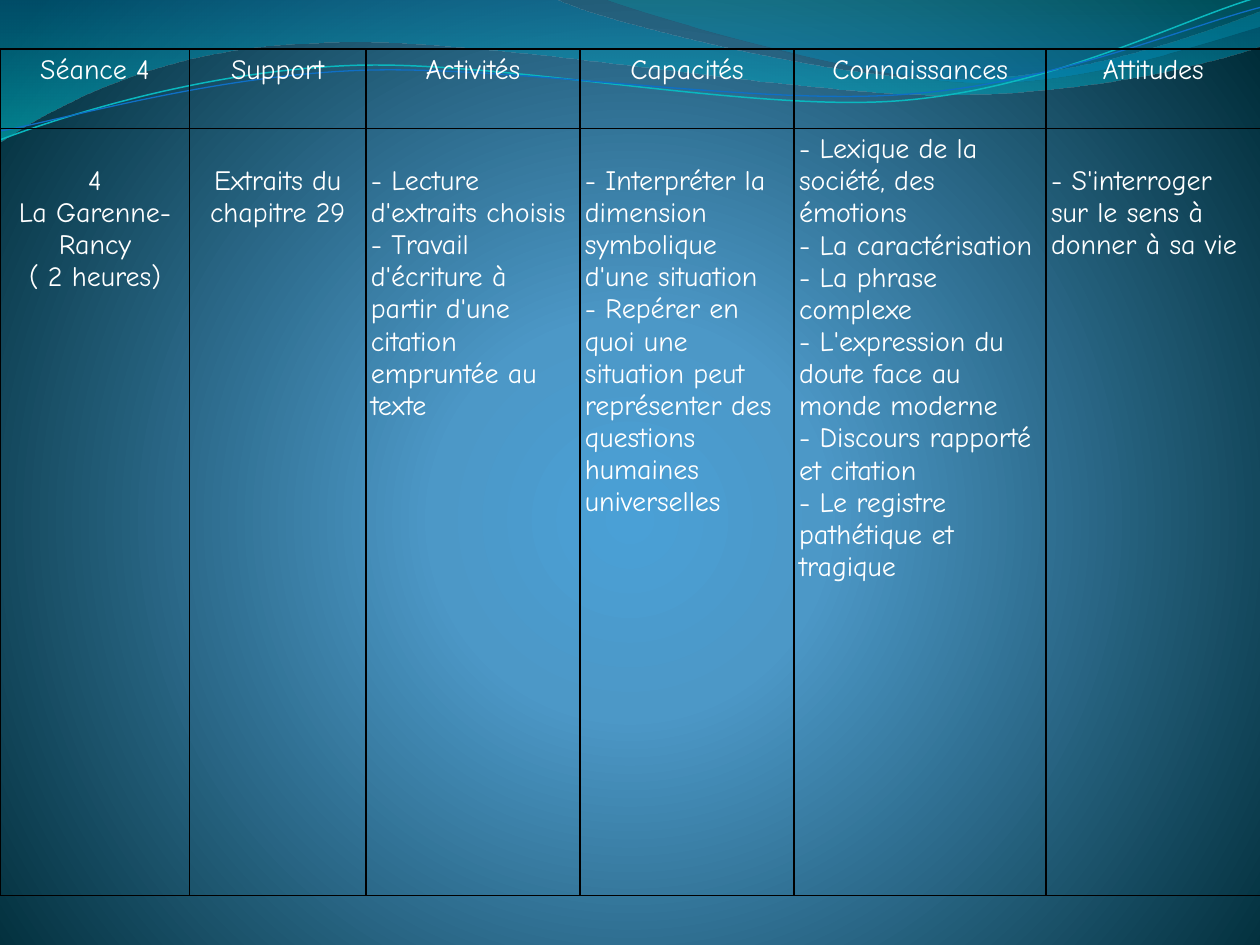
"""Build a lesson plan slide: a six-column table over a blue background with waves."""
from math import cos, radians, sin

from lxml import etree
from pptx import Presentation
from pptx.dml.color import RGBColor
from pptx.enum.text import PP_ALIGN
from pptx.oxml import parse_xml
from pptx.oxml.ns import nsdecls, qn
from pptx.util import Cm, Pt

CENTER, LEFT = PP_ALIGN.CENTER, PP_ALIGN.LEFT
WHITE = RGBColor(0xFF, 0xFF, 0xFF)
BLACK = RGBColor(0x00, 0x00, 0x00)
SKY = RGBColor(0x4A, 0xA0, 0xD6)
STEEL = RGBColor(0x4C, 0x98, 0xC7)
NIGHT = RGBColor(0x00, 0x2C, 0x38)
OCEAN = RGBColor(0x00, 0x74, 0xA1)
TURQUOISE = RGBColor(0x00, 0xC6, 0xCF)
TEAL = RGBColor(0x00, 0xA1, 0xA9)
AZURE = RGBColor(0x00, 0x8B, 0xBF)
CYAN = RGBColor(0x0A, 0xB8, 0xBF)
BLUE = RGBColor(0x0F, 0x6F, 0xC6)
INCH = 2.54
TILT = 2.7
DOWNWARD = '<a:lin ang="5400000" scaled="0"/>'
RADIAL = ('<a:path path="circle"><a:fillToRect l="10000" t="110000" '
          'r="10000" b="100000"/></a:path>')


def set_gradient(owner, fill, stops, direction):
    fill.gradient()
    placed = next(owner._element.iter(qn("a:gradFill")))
    stop_xml = "".join(
        f'<a:gs pos="{position * 1000}"><a:srgbClr val="{color}">'
        f'<a:alpha val="{opacity * 1000}"/></a:srgbClr></a:gs>'
        for position, color, opacity in stops)
    gradient = parse_xml(f'<a:gradFill {nsdecls("a")} rotWithShape="1">'
                         f'<a:gsLst>{stop_xml}</a:gsLst>{direction}</a:gradFill>')
    placed.getparent().replace(placed, gradient)


def add_outline(slide, segments, close):
    points = [pair for segment in segments for pair in zip(segment[::2], segment[1::2])]
    corners = [(Cm(x * INCH), Cm(y * INCH)) for x, y in points]
    builder = slide.shapes.build_freeform(*corners[0])
    builder.add_line_segments(corners[1:], close=close)
    shape = builder.convert_to_shape()
    shape.shadow.inherit = False
    straight = iter(list(shape._element.iter(qn("a:lnTo"))))
    for segment in segments[1:]:
        steps = [next(straight) for _ in segment[::2]]
        if len(steps) == 3:
            curve = etree.Element(qn("a:cubicBezTo"))
            steps[0].addprevious(curve)
            for step in steps:
                curve.append(step[0])
                step.getparent().remove(step)
    return shape


presentation = Presentation()
presentation.slide_width, presentation.slide_height = Cm(25.4), Cm(19.05)
slide = presentation.slides.add_slide(presentation.slide_layouts[6])
set_gradient(slide, slide.background.fill,
             [(0, SKY, 100), (25, STEEL, 100), (100, NIGHT, 100)], RADIAL)

bands = [
    ([(0, 0), (4.4, -0.01), (4.76, 0.17, 6.64, 0.63, 7.58, 0.63),
      (8.53, 0.63, 9.58, 0.26, 10, 0.09), (10.01, 0.36),
      (9.83, 0.44, 8.7, 0.76, 7.46, 0.75), (6.22, 0.75, 3.82, 0.28, 2.57, 0.34),
      (1.29, 0.36, 0.46, 0.83, -0.01, 1.13), (0, 0)],
     [(0, OCEAN, 45), (100, TURQUOISE, 55)]),
    ([(4.79, -0.01), (5.09, 0.11, 6.82, 0.62, 7.69, 0.65),
      (8.56, 0.69, 9.61, 0.32, 10, 0.21), (10, 0), (4.79, -0.01)],
     [(0, TEAL, 30), (80, AZURE, 45)]),
]
for segments, stops in bands:
    shape = add_outline(slide, segments, True)
    set_gradient(shape, shape.fill, stops, DOWNWARD)
    shape.line.fill.background()

waves = [
    ([(0, 1.11), (0.48, 0.93, 1.58, 0.57, 2.77, 0.52),
      (3.95, 0.47, 5.93, 0.89, 7.13, 0.8), (8.33, 0.71, 9.38, 0.15, 9.98, -0.02)],
     (4.99, 0.57), CYAN, 0.85),
    ([(0, 1.04), (0.47, 0.96, 1.64, 0.61, 2.83, 0.56),
      (4.03, 0.51, 5.97, 0.84, 7.17, 0.75), (8.36, 0.67, 9.41, 0.21, 10, 0.06)],
     (5, 0.59), BLUE, 0.75),
]
cosine, sine = cos(radians(TILT)), sin(radians(TILT))
for segments, (middle_x, middle_y), color, width in waves:
    level_segments = []
    for segment in segments:
        level = []
        for x, y in zip(segment[::2], segment[1::2]):
            across, down = x - middle_x, y - middle_y
            level += [middle_x + across * cosine - down * sine,
                      middle_y + across * sine + down * cosine]
        level_segments.append(level)
    shape = add_outline(slide, level_segments, False)
    shape.rotation = 360 - TILT
    shape.fill.background()
    shape.line.color.rgb = color
    shape.line.width = Pt(width)

columns = [
    (1.5, "Séance 4", CENTER, 0.74, ["4", "La Garenne-Rancy", "( 2 heures)"]),
    (1.4, "Support", CENTER, 0.74, ["Extraits du chapitre 29"]),
    (1.7, "Activités", LEFT, 0.74, [
        "- Lecture d'extraits choisis",
        "- Travail d'écriture à partir d'une citation empruntée au texte"]),
    (1.7, "Capacités", LEFT, 0.74, [
        "- Interpréter la dimension symbolique d'une situation",
        "- Repérer en quoi une situation peut représenter des questions "
        "humaines universelles"]),
    (2, "Connaissances", LEFT, 0.1, [
        "- Lexique de la société, des émotions",
        "- La caractérisation",
        "- La phrase complexe",
        "- L'expression du doute face au monde moderne",
        "- Discours rapporté et citation",
        "- Le registre pathétique et tragique"]),
    (1.7, "Attitudes", LEFT, 0.74, ["- S'interroger sur le sens à donner à sa vie"]),
]
font_format = {"name": "Comic Neue", "size": Pt(16), "bold": False}
margins = {"margin_left": Cm(0.1), "margin_right": Cm(0.1), "margin_bottom": Cm(0.1)}

table = slide.shapes.add_table(2, len(columns), Cm(0.01), Cm(0.99),
                               Cm(25.4), Cm(17.06)).table
table.first_row = table.horz_banding = False
table.rows[0].height, table.rows[1].height = Cm(1.6), Cm(15.46)
for index, (width, heading, body_alignment, body_top, lines) in enumerate(columns):
    table.columns[index].width = Cm(width * INCH)
    contents = [([heading], CENTER, 0.1), (lines, body_alignment, body_top)]
    for row, (texts, alignment, top) in enumerate(contents):
        cell = table.cell(row, index)
        cell.margin_top = Cm(top)
        for name, value in margins.items():
            setattr(cell, name, value)
        cell.text = "\n".join(texts)
        for paragraph in cell.text_frame.paragraphs:
            paragraph.alignment = alignment
            font = paragraph.runs[0].font
            font.color.rgb = WHITE
            for name, value in font_format.items():
                setattr(font, name, value)
        properties = cell._tc.get_or_add_tcPr()
        for side in ("lnL", "lnR", "lnT", "lnB"):
            border = etree.SubElement(properties, qn(f"a:{side}"), w=str(Pt(1)))
            solid = etree.SubElement(border, qn("a:solidFill"))
            etree.SubElement(solid, qn("a:srgbClr"), val=str(BLACK))
        cell.fill.background()

presentation.save("out.pptx")
